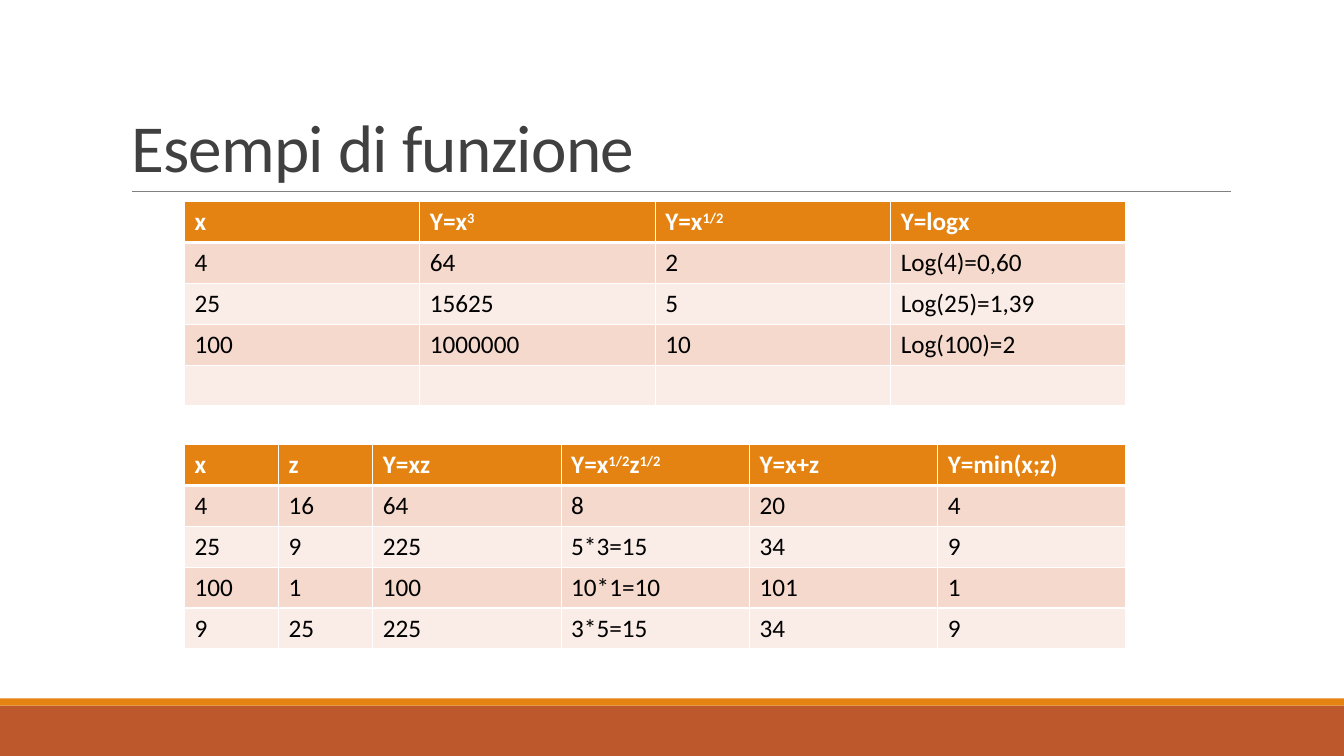
import pptx
import pptx.util
import pptx.dml.color
import pptx.enum.shapes
import pptx.enum.text
import pptx.oxml.ns
from lxml import etree

Inches = pptx.util.Inches

TITLE = "Esempi di funzione"
BANDS = [(7, 0.5, "BD582C"), (6.93, 0.07, "E48312")]
HEADER_FILL = "E48312"
ROW_FILLS = ["FAEDE7", "F5D9CC"]
TABLE_LEFT, TABLE_WIDTH, ROW_HEIGHT = 1.83, 9.34, 0.4
TABLES = [
    {
        "top": 2,
        "shares": [1, 1, 1, 1],
        "rows": [
            ["x", "Y=x^3", "Y=x^1/2", "Y=logx"],
            ["4", "64", "2", "Log(4)=0,60"],
            ["25", "15625", "5", "Log(25)=1,39"],
            ["100", "1000000", "10", "Log(100)=2"],
            ["", "", "", ""],
        ],
    },
    {
        "top": 4.41,
        "shares": [1, 1, 2, 2, 2, 2],
        "rows": [
            ["x", "z", "Y=xz", "Y=x^1/2^z^1/2", "Y=x+z", "Y=min(x;z)"],
            ["4", "16", "64", "8", "20", "4"],
            ["25", "9", "225", "5*3=15", "34", "9"],
            ["100", "1", "100", "10*1=10", "101", "1"],
            ["9", "25", "225", "3*5=15", "34", "9"],
        ],
    },
]


def color(value):
    return pptx.dml.color.RGBColor.from_string(value)


def write(frame, text, size=18, fill="000000", bold=False, spacing=None):
    para = frame.paragraphs[0]
    para.alignment = pptx.enum.text.PP_ALIGN.LEFT
    para.font.size = pptx.util.Pt(size)
    for index, piece in enumerate(text.split("^")):
        if not piece:
            continue
        span = para.add_run()
        span.text = piece
        span.font.name = "Calibri"
        span.font.size = pptx.util.Pt(size)
        span.font.bold = bold
        span.font.color.rgb = color(fill)
        properties = span.font._element
        if index % 2:
            properties.set("baseline", "30000")
        if spacing is not None:
            properties.set("spc", str(round(spacing * 100)))
    return para


def add_borders(cell, **widths):
    properties = cell._tc.get_or_add_tcPr()
    qn = pptx.oxml.ns.qn
    for side in "LRTB":
        width = pptx.util.Pt(widths.get(side, 1))
        line = etree.SubElement(properties, qn("a:ln" + side), w=str(width))
        paint = etree.SubElement(line, qn("a:solidFill"))
        etree.SubElement(paint, qn("a:srgbClr"), val="FFFFFF")


def add_band(page, top, height, fill):
    band = page.shapes.add_shape(
        pptx.enum.shapes.MSO_SHAPE.RECTANGLE,
        0, Inches(top), Inches(13.33), Inches(height))
    band.shadow.inherit = False
    band.fill.solid()
    band.fill.fore_color.rgb = color(fill)
    band.line.fill.background()


def add_rule(page):
    rule = page.shapes.add_connector(
        pptx.enum.shapes.MSO_CONNECTOR.STRAIGHT,
        Inches(1.31), Inches(1.9), Inches(12.21), Inches(1.9))
    rule.line.color.rgb = color("808080")
    rule.line.width = pptx.util.Pt(0.5)
    etree.SubElement(rule._element.spPr, pptx.oxml.ns.qn("a:effectLst"))


def add_title(page):
    title = page.shapes.title
    title.left, title.top = Inches(1.2), Inches(0.31)
    title.width, title.height = Inches(11), Inches(1.59)
    frame = title.text_frame
    frame.word_wrap = True
    frame.auto_size = pptx.enum.text.MSO_AUTO_SIZE.NONE
    frame.vertical_anchor = pptx.enum.text.MSO_ANCHOR.BOTTOM
    para = write(frame, TITLE, size=48, fill="404040", spacing=-0.5)
    para.line_spacing = 0.85


def add_function_table(page, top, shares, rows):
    table = page.shapes.add_table(
        len(rows), len(shares), Inches(TABLE_LEFT), Inches(top),
        Inches(TABLE_WIDTH), Inches(ROW_HEIGHT * len(rows))).table
    for column, share in zip(table.columns, shares):
        column.width = Inches(TABLE_WIDTH * share / sum(shares))
    for row, values in enumerate(rows):
        header = row == 0
        for column, text in enumerate(values):
            cell = table.cell(row, column)
            add_borders(cell, T=3 if row == 1 else 1, B=3 if header else 1)
            cell.fill.solid()
            cell.fill.fore_color.rgb = color(HEADER_FILL if header else ROW_FILLS[row % 2])
            write(cell.text_frame, text, fill="FFFFFF" if header else "000000", bold=header)


def main():
    deck = pptx.Presentation()
    deck.slide_width, deck.slide_height = Inches(13.33), Inches(7.5)
    page = deck.slides.add_slide(deck.slide_layouts[5])
    for band in BANDS:
        add_band(page, *band)
    add_rule(page)
    add_title(page)
    for content in TABLES:
        add_function_table(page, **content)
    deck.save("out.pptx")


if __name__ == "__main__":
    main()
